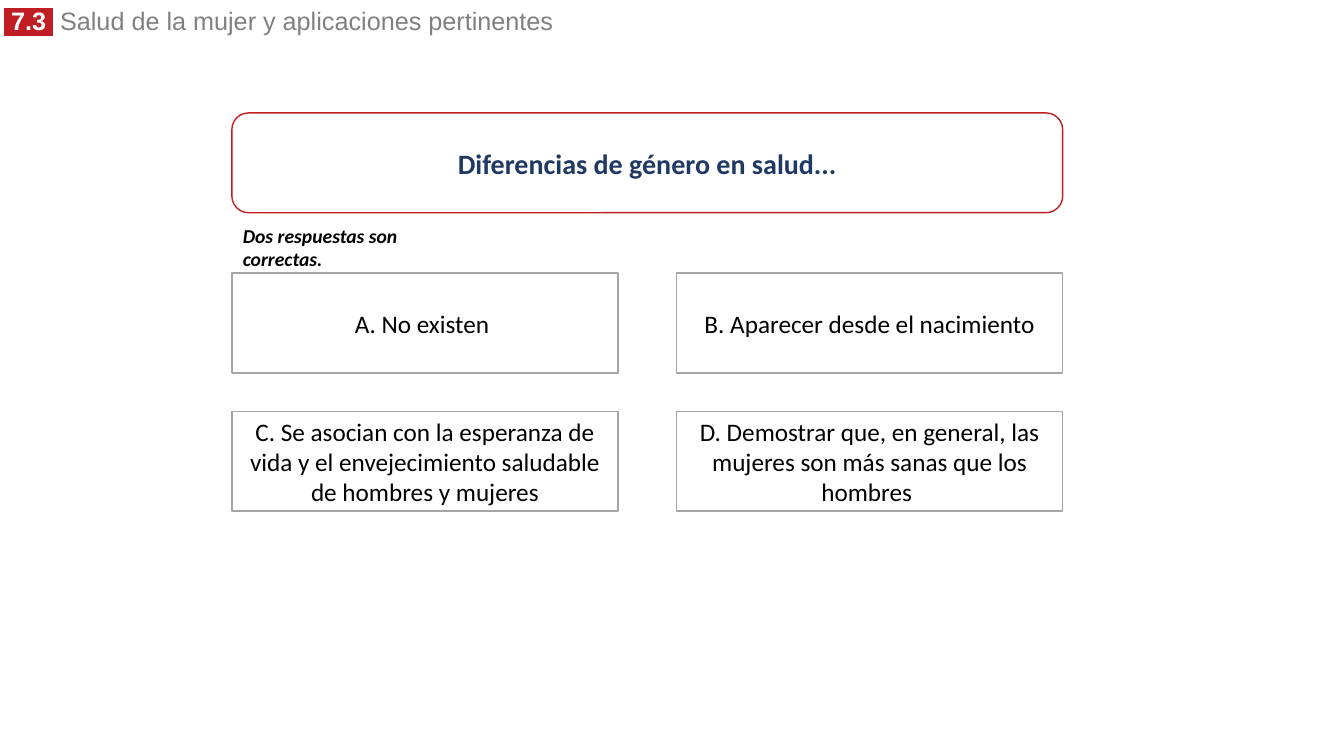
from dataclasses import dataclass

import lxml.etree
import pptx
import pptx.dml.color
import pptx.enum.shapes
import pptx.enum.text
import pptx.oxml.ns
import pptx.util

Inches = pptx.util.Inches
Shapes = pptx.enum.shapes.MSO_SHAPE
Align = pptx.enum.text.PP_ALIGN
Anchor = pptx.enum.text.MSO_ANCHOR


@dataclass(frozen=True)
class Theme:
    heading_font: str = "Arial"
    body_font: str = "Calibri"
    red: str = "C01E24"
    navy: str = "203864"
    grey: str = "808080"
    border: str = "A5A5A5"
    white: str = "FFFFFF"
    black: str = "000000"
    question_size: int = 20
    text_size: int = 18
    hint_size: int = 14


def rgb(code):
    return pptx.dml.color.RGBColor.from_string(code)


def add_span(para, text, *, font, size, color, bold=False, italic=False, highlight=None):
    span = para.add_run()
    span.text = text
    span.font.name = font
    span.font.size = pptx.util.Pt(size)
    span.font.bold = bold
    span.font.italic = italic
    span.font.color.rgb = rgb(color)
    if highlight:
        qn = pptx.oxml.ns.qn
        mark = pptx.oxml.parse_xml(f"<a:highlight {pptx.oxml.ns.nsdecls('a')}/>")
        lxml.etree.SubElement(mark, qn("a:srgbClr"), val=highlight)
        span.font._element.find(qn("a:solidFill")).addnext(mark)


class QuizSlide:
    def __init__(self, deck, theme):
        self.theme = theme
        self.page = deck.slides.add_slide(deck.slide_layouts[5])

    def heading(self, number, topic, left, top, width, height):
        theme = self.theme
        title = self.page.shapes.title
        title.left, title.top = Inches(left), Inches(top)
        title.width, title.height = Inches(width), Inches(height)
        frame = title.text_frame
        frame.auto_size = pptx.enum.text.MSO_AUTO_SIZE.NONE
        frame.vertical_anchor = Anchor.TOP
        para = frame.paragraphs[0]
        para.alignment = Align.LEFT
        para.line_spacing = 0.8
        style = dict(font=theme.heading_font, size=theme.text_size)
        add_span(para, f" {number} ", color=theme.white, bold=True,
                 highlight=theme.red, **style)
        add_span(para, f" {topic}", color=theme.grey, **style)

    def card(self, text, left, top, width, height, *, kind=Shapes.RECTANGLE, line, **style):
        """Add a white outlined shape with centred text."""
        box = self.page.shapes.add_shape(
            kind, Inches(left), Inches(top), Inches(width), Inches(height))
        box.shadow.inherit = False
        box.fill.solid()
        box.fill.fore_color.rgb = rgb(self.theme.white)
        box.line.color.rgb = rgb(line)
        box.line.width = pptx.util.Pt(1)
        frame = box.text_frame
        frame.word_wrap = True
        frame.vertical_anchor = Anchor.MIDDLE
        para = frame.paragraphs[0]
        para.alignment = Align.CENTER
        add_span(para, text, font=self.theme.body_font, **style)

    def hint(self, text, left, top, width, height):
        box = self.page.shapes.add_textbox(
            Inches(left), Inches(top), Inches(width), Inches(height))
        box.text_frame.word_wrap = True
        add_span(box.text_frame.paragraphs[0], text, font=self.theme.body_font,
                 size=self.theme.hint_size, color=self.theme.black, bold=True, italic=True)


def main():
    theme = Theme()
    deck = pptx.Presentation()
    deck.slide_width, deck.slide_height = Inches(13.33), Inches(7.5)
    quiz = QuizSlide(deck, theme)

    quiz.heading("7.3", "Salud de la mujer y aplicaciones pertinentes", -0.06, 0.06, 6.53, 0.34)

    left, card_height = 2.3, 0.99
    quiz.card("Diferencias de género en salud...", left, 1.12, 8.24, card_height,
              kind=Shapes.ROUNDED_RECTANGLE, line=theme.red,
              size=theme.question_size, color=theme.navy, bold=True)

    answers = [
        "A. No existen ",
        "B. Aparecer desde el nacimiento",
        "C. Se asocian con la esperanza de vida y el envejecimiento saludable "
        "de hombres y mujeres",
        "D. Demostrar que, en general, las mujeres son más sanas que los hombres ",
    ]
    answers_top, column_step, row_step = 2.71, 4.41, 1.37
    for index, answer in enumerate(answers):
        row, column = divmod(index, 2)
        quiz.card(answer, left + column * column_step, answers_top + row * row_step,
                  3.83, card_height, line=theme.border,
                  size=theme.text_size, color=theme.black)

    quiz.hint("Dos respuestas son correctas.", 2.31, 2.17, 2.24, 0.34)
    deck.save("out.pptx")


if __name__ == "__main__":
    main()
